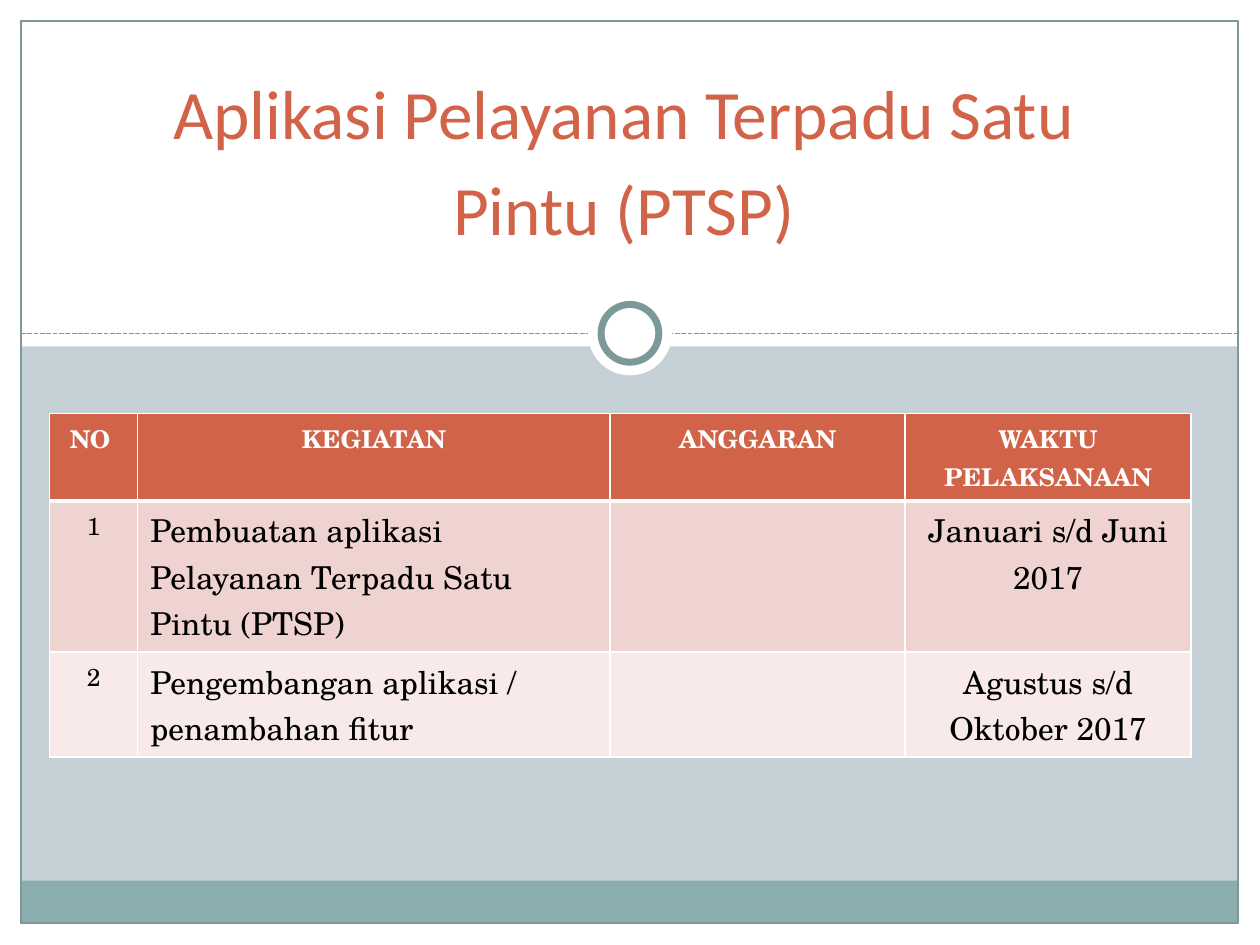
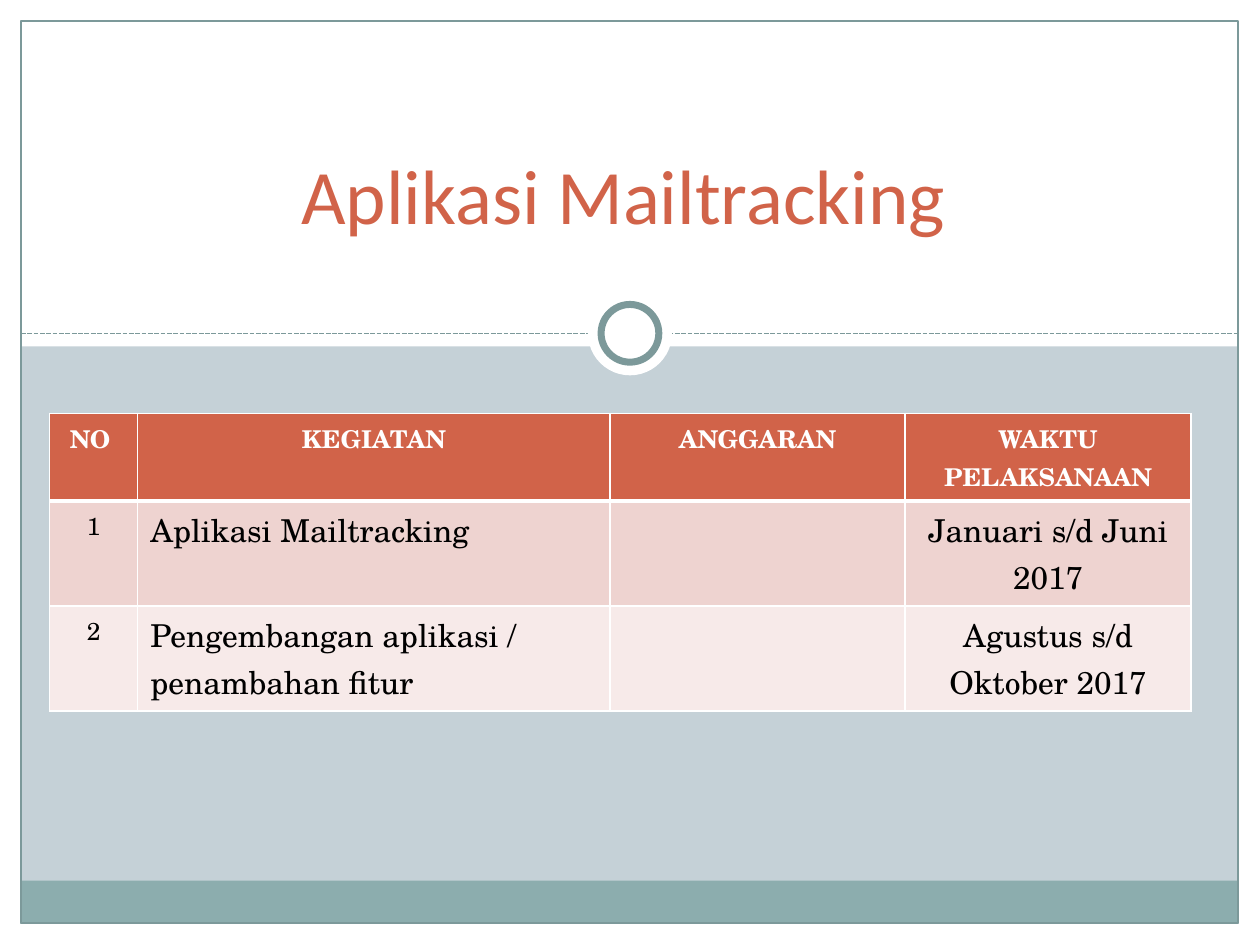
from lxml.etree import SubElement
from pptx import Presentation
from pptx.dml.color import RGBColor
from pptx.enum.dml import MSO_LINE
from pptx.enum.shapes import MSO_CONNECTOR, MSO_SHAPE
from pptx.enum.text import MSO_ANCHOR, PP_ALIGN
from pptx.oxml.ns import qn
from pptx.util import Pt

COLORS = {
    "background": "C5D1D7", "white": "FFFFFF", "band": "8CADAE", "rule": "7C999A",
    "accent": "D16349", "odd": "EED3D0", "even": "F7EAE9", "ink": "000000",
}
TITLE_FONT = "Calibri"
TABLE_FONT = "TeX Gyre Schola"
WIDTH, HEIGHT, MARGIN = 720, 540, 12
HEADER_HEIGHT, RULE_Y = 198, 190.5
COLUMN_WIDTHS = (50.4, 270, 168.5, 163.4)
HEADING_HEIGHT, TWO_LINES, THREE_LINES = 50, 60, 86.4
HEADINGS = ("NO ", "KEGIATAN", "ANGGARAN", "WAKTU PELAKSANAAN")
EXTENSION = ("2", "Pengembangan aplikasi / penambahan fitur", "", "Agustus s/d Oktober 2017")


def color(name):
    return RGBColor.from_string(COLORS[name])


def add_block(page, left, top, width, height, fill=None, line=None, weight=0.75,
              kind=MSO_SHAPE.RECTANGLE):
    block = page.shapes.add_shape(kind, Pt(left), Pt(top), Pt(width), Pt(height))
    block.shadow.inherit = False
    if fill:
        block.fill.solid()
        block.fill.fore_color.rgb = color(fill)
    else:
        block.fill.background()
    if line:
        block.line.color.rgb = color(line)
        block.line.width = Pt(weight)
    else:
        block.line.fill.background()


def add_circle(page, diameter, **style):
    add_block(page, (WIDTH - diameter) / 2, RULE_Y - diameter / 2, diameter, diameter,
              fill="white", kind=MSO_SHAPE.OVAL, **style)


def add_dashed_rule(page):
    rule = page.shapes.add_connector(MSO_CONNECTOR.STRAIGHT, Pt(MARGIN), Pt(RULE_Y),
                                     Pt(WIDTH - MARGIN), Pt(RULE_Y))
    rule.line.color.rgb = color("rule")
    rule.line.width = Pt(0.9)
    rule.line.dash_style = MSO_LINE.SQUARE_DOT
    SubElement(rule._element.spPr, qn("a:effectLst"))


def add_frame(page):
    page.background.fill.solid()
    page.background.fill.fore_color.rgb = color("background")
    # White margins and title area
    add_block(page, 0, HEIGHT - MARGIN, WIDTH, MARGIN, "white")
    for left in (WIDTH - MARGIN, 0):
        add_block(page, left, 0, MARGIN, HEIGHT, "white")
    add_block(page, 0, 0, WIDTH, HEADER_HEIGHT, "white")
    # Footer band, rule and outline
    add_block(page, 11.5, 503.3, 695.5, 24.5, "band")
    add_dashed_rule(page)
    add_block(page, MARGIN, MARGIN, 695.5, 515.5, line="rule")
    # Ring on the rule
    add_circle(page, 48)
    add_circle(page, 33, line="rule", weight=4)


def add_title(page, text, size):
    box = page.shapes.add_textbox(Pt(50.4), Pt(33.8), Pt(612), Pt(157.7))
    frame = box.text_frame
    frame.word_wrap = True
    frame.vertical_anchor = MSO_ANCHOR.BOTTOM
    frame.margin_top = 0
    frame.margin_bottom = Pt(size * 1.24)
    para = frame.paragraphs[0]
    para.text = text
    para.alignment = PP_ALIGN.CENTER
    para.line_spacing = 1.15
    para.space_after = Pt(10)
    para.font.name = TITLE_FONT
    para.font.size = Pt(size)
    para.font.color.rgb = color("accent")


def set_borders(cell, **weights):
    properties = cell._tc.get_or_add_tcPr()
    for index, side in enumerate("LRTB"):
        border = properties.makeelement(
            qn(f"a:ln{side}"), {"w": str(Pt(weights.get(side, 1)))})
        fill = SubElement(border, qn("a:solidFill"))
        SubElement(fill, qn("a:srgbClr"), val=COLORS["white"])
        properties.insert(index, border)


def fill_cell(cell, text, row, column):
    is_header = row == 0
    cell.fill.solid()
    cell.fill.fore_color.rgb = color("accent" if is_header else "odd" if row % 2 else "even")
    set_borders(cell, T=3 if row == 1 else 1, B=3 if is_header else 1)
    para = cell.text_frame.paragraphs[0]
    para.text = text
    para.alignment = PP_ALIGN.LEFT if column == 1 and not is_header else PP_ALIGN.CENTER
    para.font.name = TABLE_FONT
    para.font.size = Pt(14 if is_header or column == 0 else 18)
    para.font.bold = is_header
    para.font.color.rgb = color("white" if is_header else "ink")


def add_schedule(page, activities, heights):
    rows = (HEADINGS, *activities)
    table = page.shapes.add_table(
        len(rows), len(HEADINGS), Pt(28.3), Pt(236.2),
        Pt(sum(COLUMN_WIDTHS)), Pt(sum(heights))).table
    for column, width in zip(table.columns, COLUMN_WIDTHS):
        column.width = Pt(width)
    for row, (texts, height) in enumerate(zip(rows, heights)):
        table.rows[row].height = Pt(height)
        for column, text in enumerate(texts):
            fill_cell(table.cell(row, column), text, row, column)


def add_plan_page(deck, title, title_size, first_activity, first_height):
    page = deck.slides.add_slide(deck.slide_layouts[6])
    add_frame(page)
    add_title(page, title, title_size)
    add_schedule(page, (("1", first_activity, "", "Januari s/d Juni 2017"), EXTENSION),
                 (HEADING_HEIGHT, first_height, TWO_LINES))


def main():
    deck = Presentation()
    deck.slide_width, deck.slide_height = Pt(WIDTH), Pt(HEIGHT)
    add_plan_page(deck, "Aplikasi Pelayanan Terpadu Satu Pintu (PTSP)", 39.6,
                  "Pembuatan aplikasi Pelayanan Terpadu Satu Pintu (PTSP)", THREE_LINES)
    add_plan_page(deck, "Aplikasi Mailtracking", 44, "Aplikasi Mailtracking", TWO_LINES)
    deck.save("out.pptx")


if __name__ == "__main__":
    main()
